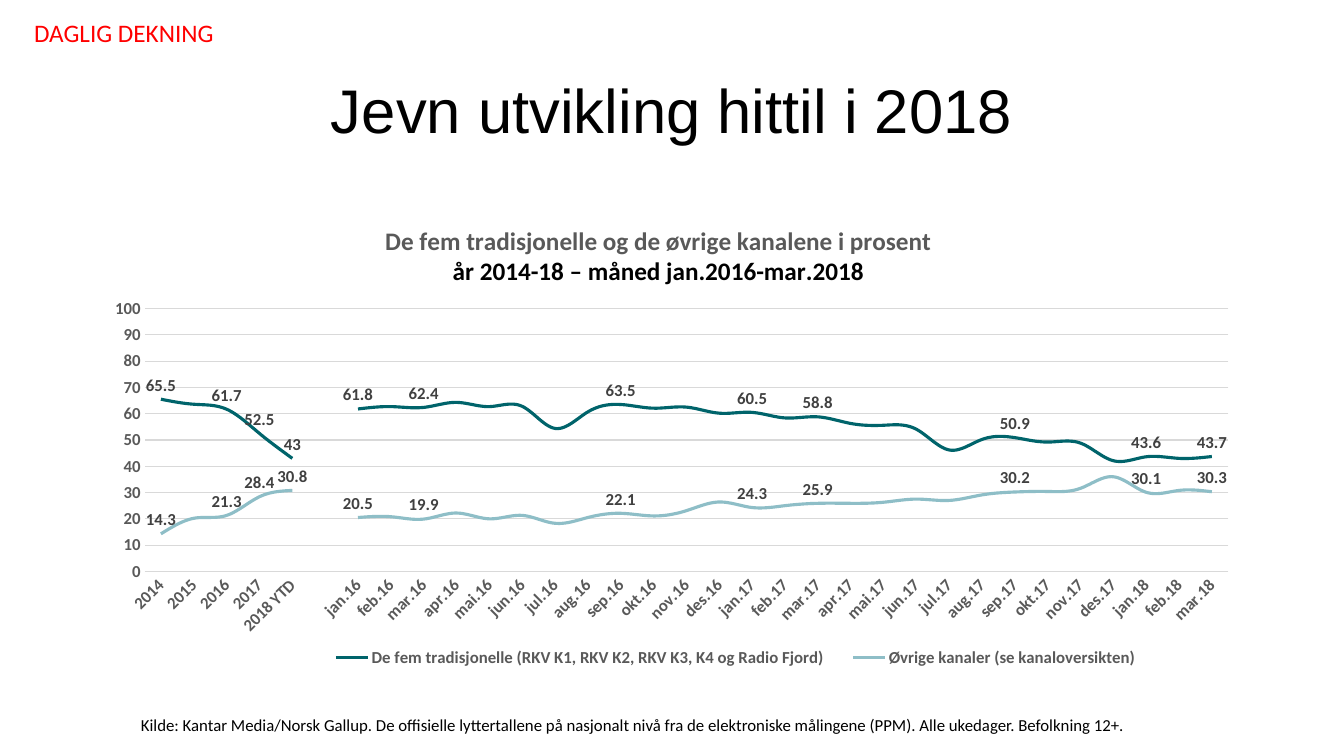
from lxml import etree
from pptx import Presentation
from pptx.chart.data import CategoryChartData
from pptx.dml.color import RGBColor
from pptx.enum.chart import (XL_CHART_TYPE as ChartType, XL_LABEL_POSITION as LabelPos,
                             XL_LEGEND_POSITION as LegendPos, XL_TICK_MARK as Tick)
from pptx.enum.text import MSO_ANCHOR as Anchor, PP_ALIGN as Align
from pptx.oxml.ns import qn
from pptx.util import Pt

# Content
HEADING = "Jevn utvikling hittil i 2018"
TOPIC = "DAGLIG DEKNING"
SOURCE = ("Kilde: Kantar Media/Norsk Gallup. De offisielle lyttertallene på nasjonalt nivå "
          "fra de elektroniske målingene (PPM). Alle ukedager. Befolkning 12+.")
CHART_TITLE = [("De fem tradisjonelle og de øvrige kanalene i prosent", "grey"),
               ("år 2014-18 – måned jan.2016-mar.2018", "black")]
MONTHS = "jan feb mar apr mai jun jul aug sep okt nov des".split()
YEARS = ["2014", "2015", "2016", "2017", "2018 YTD"]
PERIODS = YEARS + [""] + [f"{month}.{year}" for year in (16, 17, 18) for month in MONTHS][:27]
SERIES = [
    ("De fem tradisjonelle (RKV K1, RKV K2, RKV K3, K4 og Radio Fjord)", "teal",
     [65.5, 63.6, 61.7, 52.5, 43, None,
      61.8, 62.7, 62.4, 64.3, 62.7, 62.8, 54.4, 60.7, 63.5, 62.1, 62.5, 60.2,
      60.5, 58.4, 58.8, 56.3, 55.6, 54.1, 46.2, 50.2, 50.9, 49.2, 48.8, 42.1,
      43.6, 43, 43.7]),
    ("Øvrige kanaler (se kanaloversikten)", "light teal",
     [14.3, 20.2, 21.3, 28.4, 30.8, None,
      20.5, 20.8, 19.9, 22.2, 20, 21.3, 18.3, 20.5, 22.1, 21.1, 23.1, 26.4,
      24.3, 25, 25.9, 25.9, 26.3, 27.5, 27, 29.1, 30.2, 30.4, 31.6, 36,
      30.1, 30.8, 30.3]),
]
LABELLED = ["2014", "2016", "2017", "2018 YTD", "jan.16", "mar.16", "sep.16",
            "jan.17", "mar.17", "sep.17", "jan.18", "mar.18"]
COLORS = {"black": "000000", "red": "FF0000", "grey": "595959", "dark grey": "404040",
          "rule": "D9D9D9", "teal": "00646B", "light teal": "8EBEC7"}


def color(name):
    return RGBColor.from_string(COLORS[name])


def style(font, size, name, bold=False, face="Calibri"):
    font.size, font.bold, font.name = Pt(size), bold, face
    font.color.rgb = color(name)


def rule(line, name, width):
    line.color.rgb = color(name)
    line.width = Pt(width)


def add_note(slide, text, box, size, name):
    frame = slide.shapes.add_textbox(*map(Pt, box)).text_frame
    frame.word_wrap = True
    frame.text = text
    style(frame.paragraphs[0].runs[0].font, size, name)


def lay_out(part, index, inner=False, **fractions):
    """Fix a chart part's place, as fractions of the chart area."""
    for old in part.findall(qn("c:layout")):
        part.remove(old)
    layout = etree.Element(qn("c:layout"))
    manual = etree.SubElement(layout, qn("c:manualLayout"))
    settings = [("layoutTarget", "inner")] if inner else []
    settings += [("xMode", "edge"), ("yMode", "edge"), *fractions.items()]
    for tag, value in settings:
        etree.SubElement(manual, qn(f"c:{tag}")).set("val", str(value))
    part.insert(index, layout)


prs = Presentation()
prs.slide_width, prs.slide_height = Pt(960), Pt(540)
slide = prs.slides.add_slide(prs.slide_layouts[5])

# Heading
heading = slide.shapes.title
heading.left, heading.top, heading.width, heading.height = map(Pt, (66, 28.75, 828, 104.4))
heading.text_frame.text = HEADING
heading.text_frame.vertical_anchor = Anchor.MIDDLE
heading_line = heading.text_frame.paragraphs[0]
heading_line.alignment, heading_line.line_spacing = Align.CENTER, 0.9
style(heading_line.runs[0].font, 44, "black", face="Arial")

# Chart
data = CategoryChartData(number_format="General")
data.categories = PERIODS
for name, _, values in SERIES:
    data.add_series(name, values)
chart = slide.shapes.add_chart(ChartType.LINE, *map(Pt, (66, 144, 828, 342.7)), data).chart
style(chart.font, 10, "black")

# Chart title
title_frame = chart.chart_title.text_frame
title_frame.text = "\n".join(text for text, _ in CHART_TITLE)
for paragraph, (_, name) in zip(title_frame.paragraphs, CHART_TITLE):
    paragraph.alignment = Align.CENTER
    style(paragraph.runs[0].font, 18, name, bold=True)

# Axes
periods, percent = chart.category_axis, chart.value_axis
for axis in (periods, percent):
    axis.major_tick_mark = axis.minor_tick_mark = Tick.NONE
    style(axis.tick_labels.font, 12, "grey", bold=True)
rule(periods.format.line, "rule", 0.75)
periods._element.find(qn("c:txPr")).find(qn("a:bodyPr")).set("rot", "-2700000")
percent.minimum_scale, percent.maximum_scale, percent.major_unit = 0, 100, 10
percent.format.line.fill.background()
rule(percent.major_gridlines.format.line, "rule", 0.75)

# Lines and their selected value labels
chart.plots[0].vary_by_categories = False
for series, (_, name, _) in zip(chart.plots[0].series, SERIES):
    series.smooth = True
    rule(series.format.line, name, 2.25)
    series.data_labels.show_value = False
    for period in LABELLED:
        label = series.points[PERIODS.index(period)].data_label
        style(label.font, 12, "dark grey", bold=True)
        label.position = LabelPos.ABOVE

# Legend
chart.has_legend = True
legend = chart.legend
legend.position, legend.include_in_layout = LegendPos.BOTTOM, False
style(legend.font, 12, "grey", bold=True)

# Places inside the chart
lay_out(chart.chart_title._element, 1, x=0.25, y=0.04)
lay_out(periods._element.getparent(), 0, inner=True, x=0.045, y=0.223, w=0.935, h=0.548)
lay_out(legend._element, 1, x=0.19, y=0.92, w=0.73, h=0.06)

# Source and topic
add_note(slide, SOURCE, (93.6, 506.9, 808.6, 21.6), 12, "black")
add_note(slide, TOPIC, (17.3, 8.6, 420.5, 28.8), 18, "red")

prs.save("out.pptx")
